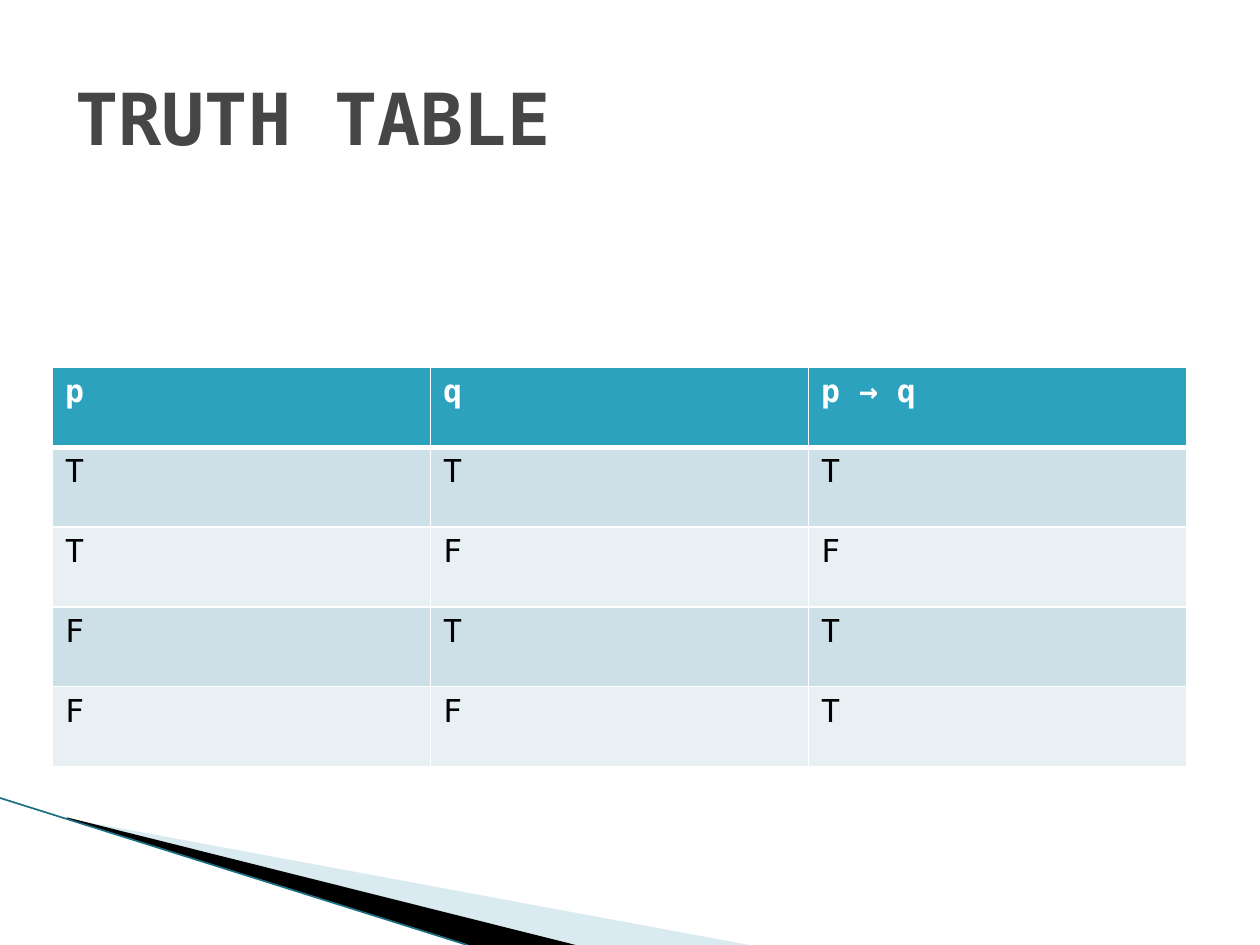
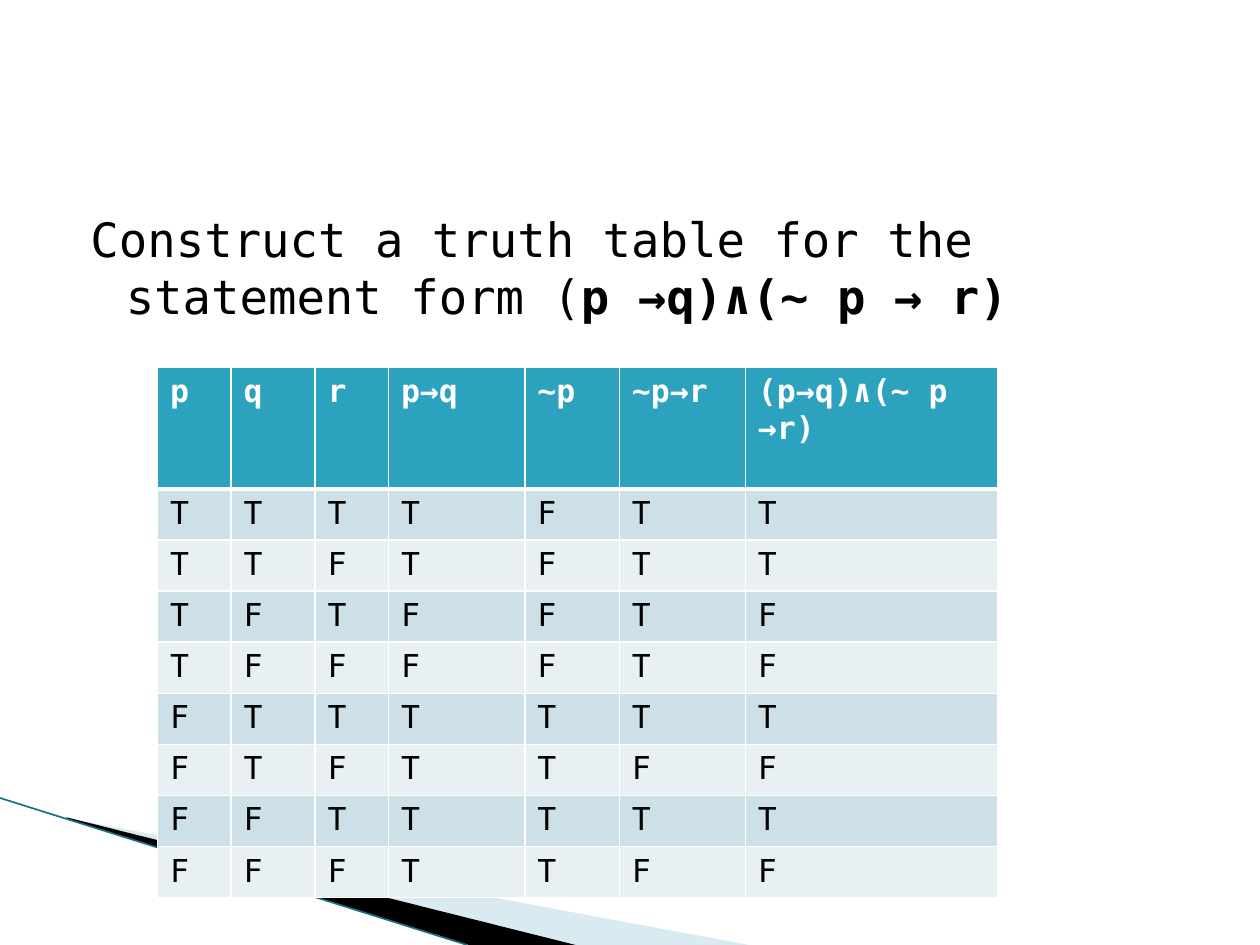
from itertools import product

from lxml import etree
from pptx import Presentation
from pptx.dml.color import RGBColor
from pptx.enum.shapes import MSO_CONNECTOR
from pptx.enum.text import MSO_ANCHOR
from pptx.oxml.ns import qn
from pptx.util import Pt

STRAIGHT = MSO_CONNECTOR.STRAIGHT
MIDDLE = MSO_ANCHOR.MIDDLE
FONT = "DejaVu Sans Mono"
COLORS = {
    "title": "464646",
    "text": "000000",
    "white": "FFFFFF",
    "header": "2DA2BF",
    "band_dark": "CDE0E8",
    "band_light": "E8F0F4",
    "wedge_light": "A0CBDC",
    "wedge_dark": "000000",
    "edge": "1A6F84",
}
WEDGES = [
    ("wedge_light", 40, [(39.6, 468.5), (428.4, 540), (328.3, 540), (39.6, 468)]),
    ("wedge_dark", 100, [(38.2, 467.3), (329, 540), (267.8, 540), (38.9, 468)]),
]


def style(run, size, color, bold=False):
    run.font.name = FONT
    run.font.size = Pt(size)
    run.font.bold = bold
    run.font.color.rgb = RGBColor.from_string(COLORS[color])


def add_truth_table(slide, left, top, widths, header_height, row_height, rows):
    heights = [header_height] + [row_height] * (len(rows) - 1)
    table = slide.shapes.add_table(len(rows), len(widths), Pt(left), Pt(top),
                                   Pt(sum(widths)), Pt(sum(heights))).table
    for column, width in zip(table.columns, widths):
        column.width = Pt(width)
    for r, (row, height) in enumerate(zip(rows, heights)):
        table.rows[r].height = Pt(height)
        is_header = r == 0
        fill = "header" if is_header else "band_dark" if r % 2 else "band_light"
        for c, value in enumerate(row):
            cell = table.cell(r, c)
            cell.text_frame.text = value
            style(cell.text_frame.paragraphs[0].runs[0], 18,
                  "white" if is_header else "text", is_header)
            # White rules, with a thick one under the header
            properties = cell._tc.get_or_add_tcPr()
            for side in "LRTB":
                thick = (is_header and side == "B") or (r == 1 and side == "T")
                border = etree.SubElement(properties, qn(f"a:ln{side}"),
                                          w=str(Pt(3 if thick else 1)))
                solid = etree.SubElement(border, qn("a:solidFill"))
                etree.SubElement(solid, qn("a:srgbClr"), val=COLORS["white"])
            cell.fill.solid()
            cell.fill.fore_color.rgb = RGBColor.from_string(COLORS[fill])


presentation = Presentation()
presentation.slide_width = Pt(720)
presentation.slide_height = Pt(540)
blank = presentation.slide_layouts[6]
implication_slide, exercise_slide = [presentation.slides.add_slide(blank) for _ in range(2)]

# Shared corner decoration
for slide in (implication_slide, exercise_slide):
    for color, opacity, points in WEDGES:
        builder = slide.shapes.build_freeform(*points[0], scale=Pt(1))
        builder.add_line_segments(points[1:], close=True)
        wedge = builder.convert_to_shape()
        wedge.shadow.inherit = False
        wedge.fill.solid()
        wedge.fill.fore_color.rgb = RGBColor.from_string(COLORS[color])
        wedge.line.fill.background()
        if opacity < 100:
            tint = wedge._element.spPr.find(qn("a:solidFill"))[0]
            etree.SubElement(tint, qn("a:alpha"), val=str(opacity * 1000))
    edge = slide.shapes.add_connector(STRAIGHT, Pt(0), Pt(456), Pt(267), Pt(540))
    edge.line.color.rgb = RGBColor.from_string(COLORS["edge"])
    edge.line.width = Pt(0.95)
    etree.SubElement(edge._element.spPr, qn("a:effectLst"))

# Slide 1: the conditional
title = implication_slide.shapes.add_textbox(Pt(36), Pt(21.6), Pt(648), Pt(90)).text_frame
title.word_wrap = True
title.vertical_anchor = MIDDLE
title.text = "TRUTH TABLE"
style(title.paragraphs[0].runs[0], 41, "title", True)

mark = {True: "T", False: "F"}
implication_rows = [("p", "q", "p → q")]
for p, q in product((True, False), repeat=2):
    implication_rows.append([mark[value] for value in (p, q, not p or q)])
add_truth_table(implication_slide, 30, 210, [216] * 3, 45.6, 45.6, implication_rows)

# Slide 2: compound statement
task = exercise_slide.shapes.add_textbox(Pt(36), Pt(116.64), Pt(648), Pt(80)).text_frame
task.word_wrap = True
statement = task.paragraphs[0]
indents = statement._p.get_or_add_pPr()
indents.set("marL", str(Pt(28.8)))
indents.set("indent", str(Pt(-20.16)))
for text, bold in (("Construct a truth table for the statement form (", False),
                   ("p →q)∧(~ p → r)", True)):
    run = statement.add_run()
    run.text = text
    style(run, 27, "text", bold)

compound_rows = [("p", "q", "r", "p→q", "~p", "~p→r", "(p→q)∧(~ p →r)")]
for p, q, r in product((True, False), repeat=3):
    first, second = not p or q, p or r
    values = (p, q, r, first, not p, second, first and second)
    compound_rows.append([mark[value] for value in values])
add_truth_table(exercise_slide, 90, 210, [42, 48, 42, 78, 54, 72, 144],
                69.4, 29.2, compound_rows)

presentation.save("out.pptx")
